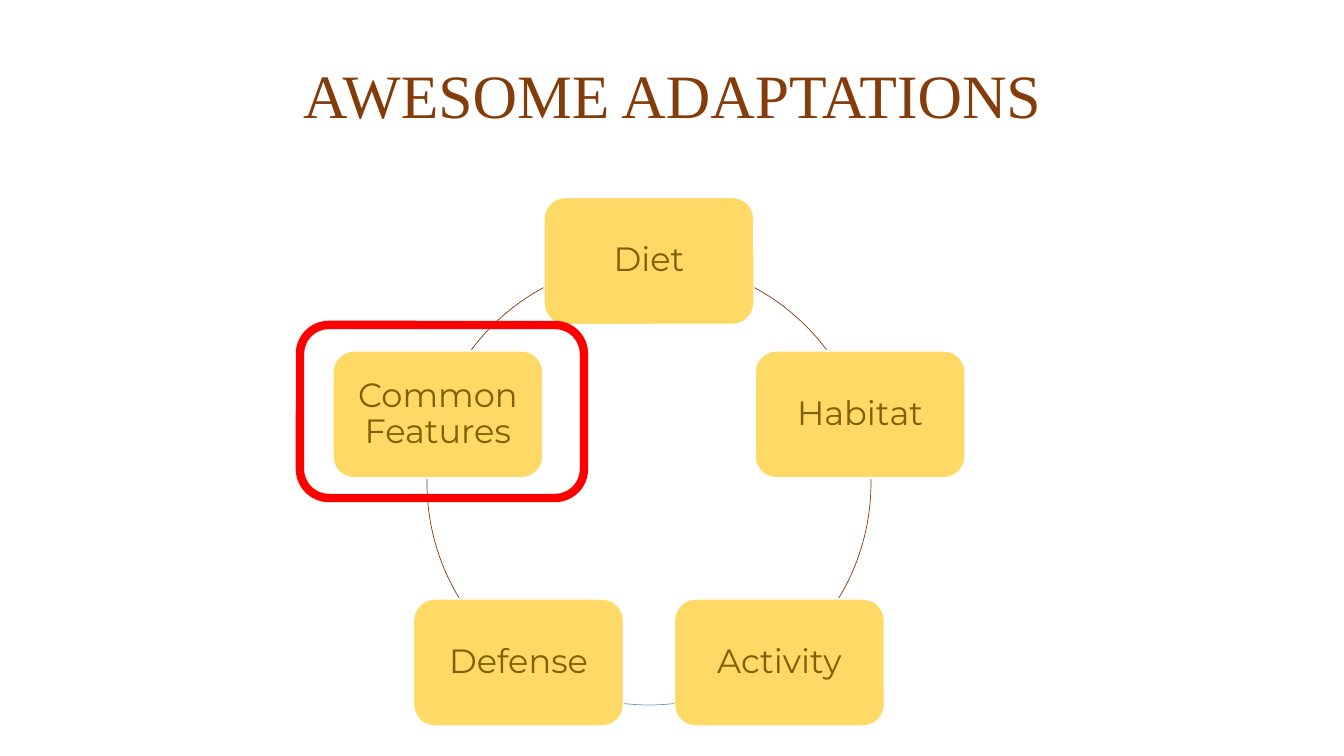
from math import cos, radians, sin

from pptx import Presentation
from pptx.dml.color import RGBColor
from pptx.enum.shapes import MSO_SHAPE
from pptx.enum.text import MSO_ANCHOR, PP_ALIGN
from pptx.util import Pt

ARC, ROUNDED = MSO_SHAPE.ARC, MSO_SHAPE.ROUNDED_RECTANGLE
MIDDLE, CENTER = MSO_ANCHOR.MIDDLE, PP_ALIGN.CENTER

HEADING = "AWESOME ADAPTATIONS"
TOPICS = ["Diet", "Habitat", "Activity", "Defense", "Common Features"]
LINKS = [
    (298.4, 323.1, "brown"),
    (359, 31.2, "brown"),
    (83.5, 96.5, "blue"),
    (148.8, 181, "brown"),
    (216.9, 241.6, "brown"),
]
COLORS = {
    "brown": "843C0B",
    "blue": "5B9BD5",
    "gold": "FFD966",
    "olive": "806000",
    "white": "FFFFFF",
    "red": "FF0000",
}
PX = 914400 / 100.8
SLIDE_SIZE = (1344, 756)
HEADING_BOX = (93, 26, 1159, 146)
HIGHLIGHT_BOX = (300, 325, 284, 173)
RING_X, RING_Y, RADIUS = 649, 483, 222
CARD_W, CARD_H, CARD_INSET = 210, 127, 10
DEGREE = 60000 / 100000


def px(value):
    return round(value * PX)


def color(name):
    return RGBColor.from_string(COLORS[name])


def add_outline(slide, kind, box, line, width, fill=None):
    shape = slide.shapes.add_shape(kind, *map(px, box))
    shape.shadow.inherit = False
    if fill:
        shape.fill.solid()
        shape.fill.fore_color.rgb = color(fill)
    else:
        shape.fill.background()
    shape.line.color.rgb = color(line)
    shape.line.width = Pt(width)
    return shape


def write(frame, text, font, size, ink):
    frame.word_wrap = True
    frame.vertical_anchor = MIDDLE
    paragraph = frame.paragraphs[0]
    paragraph.alignment = CENTER
    paragraph.line_spacing = 0.9
    run = paragraph.add_run()
    run.text = text
    run.font.name = font
    run.font.size = Pt(size)
    run.font.color.rgb = color(ink)


def add_card(slide, position, topic):
    angle = radians(360 / len(TOPICS) * position - 90)
    left = RING_X + RADIUS * cos(angle) - CARD_W / 2
    top = RING_Y + RADIUS * sin(angle) - CARD_H / 2
    card = add_outline(slide, ROUNDED, (left, top, CARD_W, CARD_H), "white", 1, "gold")
    frame = card.text_frame
    frame.margin_left = frame.margin_right = px(CARD_INSET)
    frame.margin_top = frame.margin_bottom = px(CARD_INSET)
    write(frame, topic, "Montserrat", 24, "olive")


def add_link(slide, start, end, ink):
    box = (RING_X - RADIUS, RING_Y - RADIUS, 2 * RADIUS, 2 * RADIUS)
    link = add_outline(slide, ARC, box, ink, 0.5)
    link.adjustments[0] = start * DEGREE
    link.adjustments[1] = end * DEGREE


def main():
    deck = Presentation()
    deck.slide_width, deck.slide_height = map(px, SLIDE_SIZE)
    slide = deck.slides.add_slide(deck.slide_layouts[5])
    slide.background.fill.solid()
    slide.background.fill.fore_color.rgb = color("white")

    heading = slide.shapes.title
    heading.left, heading.top, heading.width, heading.height = map(px, HEADING_BOX)
    write(heading.text_frame, HEADING, "Times New Roman", 44, "brown")

    for position, (topic, link) in enumerate(zip(TOPICS, LINKS)):
        add_card(slide, position, topic)
        add_link(slide, *link)

    add_outline(slide, ROUNDED, HIGHLIGHT_BOX, "red", 6)
    deck.save("out.pptx")


if __name__ == "__main__":
    main()
